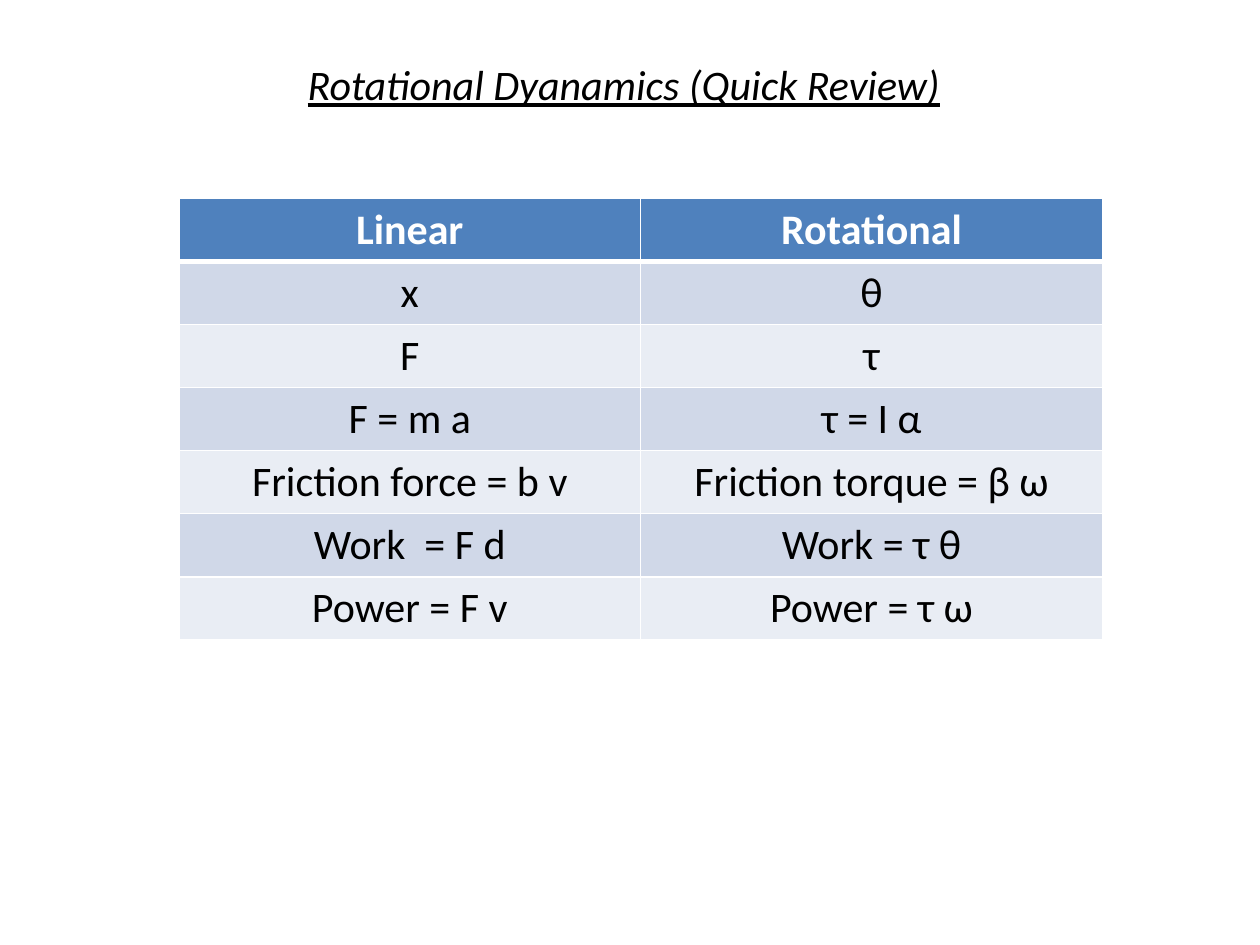
from dataclasses import dataclass

from lxml.etree import SubElement as Sub
from pptx import Presentation
from pptx.dml.color import RGBColor as RGB
from pptx.enum.text import MSO_ANCHOR as Anchor, MSO_AUTO_SIZE as Auto, PP_ALIGN as Align
from pptx.oxml.ns import qn
from pptx.util import Inches, Pt


@dataclass(frozen=True)
class Theme:
    font: str = "Calibri"
    size: int = 24
    ink: str = "000000"
    white: str = "FFFFFF"
    head: str = "4F81BD"
    bands: tuple = ("D0D8E8", "E9EDF4")
    thin: int = 1
    thick: int = 3


THEME = Theme()
WIDE, HIGH = Inches(10), Inches(7.5)
TITLE = "Rotational Dyanamics (Quick Review)"
ROWS = [
    ("Linear", "Rotational"),
    ("x", "θ"),
    ("F", "τ"),
    ("F = m a", "τ = Ι α"),
    ("Friction force = b v", "Friction torque = β ω"),
    ("Work  = F d", "Work = τ θ"),
    ("Power = F v", "Power = τ ω"),
]


def share(left, top, width, height):
    """Turn shares of the slide into a box of lengths."""
    return [round(part * full) for part, full in
            zip((left, top, width, height), (WIDE, HIGH, WIDE, HIGH))]


def write(frame, text, color, **style):
    frame.text = text
    para = frame.paragraphs[0]
    para.alignment = Align.CENTER
    font = para.runs[0].font
    font.name, font.size = THEME.font, Pt(THEME.size)
    font.color.rgb = RGB.from_string(color)
    for name, value in style.items():
        setattr(font, name, value)


def edge(cell, side, width):
    """Draw one white border; borders come before the cell's fill."""
    line = Sub(cell._tc.get_or_add_tcPr(), qn(f"a:ln{side}"), w=str(Pt(width)))
    fill = Sub(line, qn("a:solidFill"))
    Sub(fill, qn("a:srgbClr"), val=THEME.white)


def add_title(slide, box):
    title = slide.shapes.title
    title.left, title.top, title.width, title.height = box
    frame = title.text_frame
    write(frame, TITLE, THEME.ink, italic=True, underline=True)
    frame.word_wrap = False
    frame.auto_size = Auto.SHAPE_TO_FIT_TEXT
    frame.vertical_anchor = Anchor.TOP


def add_grid(slide, box):
    grid = slide.shapes.add_table(len(ROWS), len(ROWS[0]), *box).table
    for r, row in enumerate(ROWS):
        head = r == 0
        color = THEME.head if head else THEME.bands[(r - 1) % 2]
        # The rule under the header row is thicker than the others
        above = THEME.thick if r == 1 else THEME.thin
        below = THEME.thick if head else THEME.thin
        for c, text in enumerate(row):
            cell = grid.cell(r, c)
            write(cell.text_frame, text, THEME.white if head else THEME.ink, bold=head)
            for side, width in zip("LRTB", (THEME.thin, THEME.thin, above, below)):
                edge(cell, side, width)
            cell.fill.solid()
            cell.fill.fore_color.rgb = RGB.from_string(color)


def main():
    deck = Presentation()
    deck.slide_width, deck.slide_height = WIDE, HIGH
    slide = deck.slides.add_slide(deck.slide_layouts.get_by_name("Title Only"))
    # Heading
    add_title(slide, share(0.23, 0.055, 0.53, 0.07))
    # Comparison table
    add_grid(slide, share(0.142, 0.21, 0.733, 0.467))
    deck.save("out.pptx")


if __name__ == "__main__":
    main()
